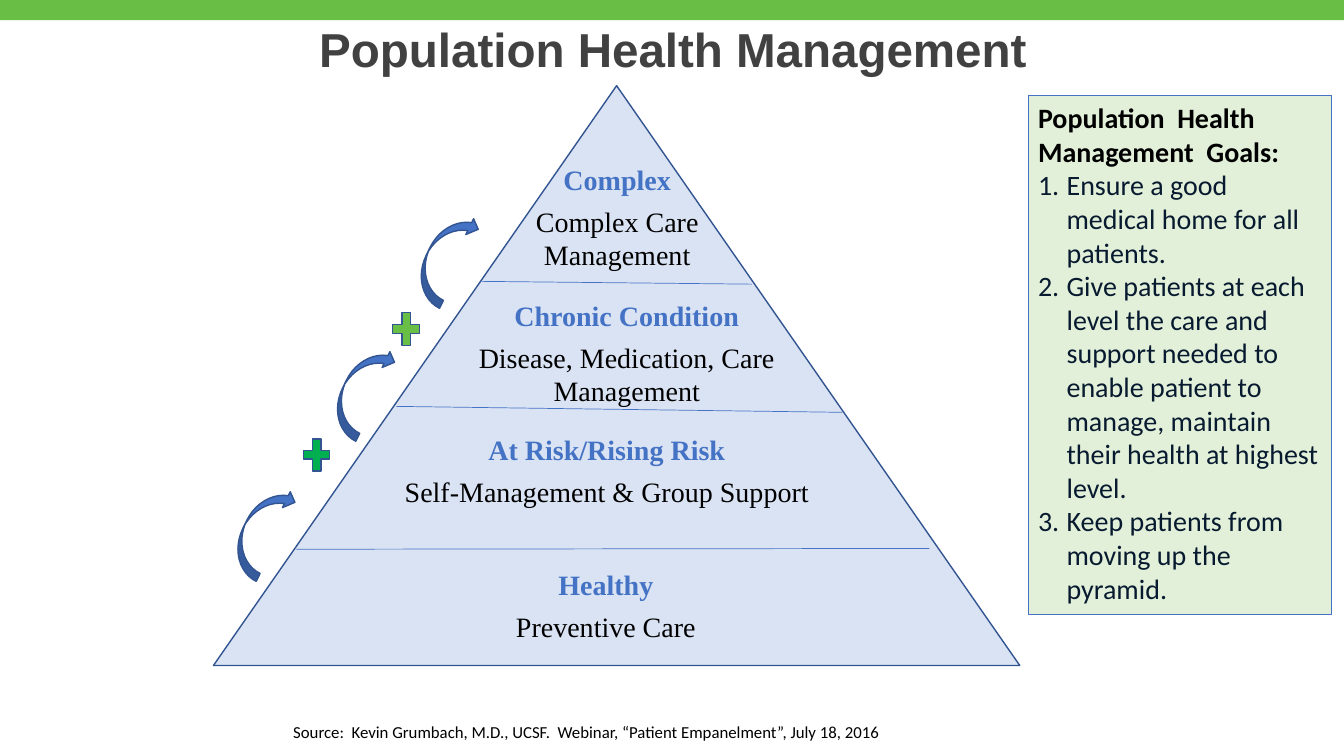
from pptx import Presentation
from pptx.dml.color import RGBColor
from pptx.enum.shapes import MSO_CONNECTOR, MSO_SHAPE
from pptx.enum.text import MSO_ANCHOR, PP_ALIGN
from pptx.oxml.ns import qn
from pptx.util import Cm, Pt
from lxml.etree import SubElement

# Content: places are left, top, width, height in cm
COLORS = {
    "bar": "69BE46", "title": "414141", "pale": "DAE3F3", "edge": "325491",
    "blue": "4472C4", "mint": "E2F0D9", "navy": "081A2F", "black": "000000",
    "green": "00B050",
}
TITLE = "Population Health Management"
LEVELS = [
    ("Complex", "Complex Care Management", (11.58, 3.96, 7.95, 3.02)),
    ("Chronic Condition", "Disease, Medication, Care Management", (10.92, 7.39, 9.75, 3.02)),
    ("At Risk/Rising Risk", "Self-Management & Group Support", (9.91, 10.77, 10.77, 3.02)),
    ("Healthy", "Preventive Care", (11.46, 14.17, 7.62, 2.18)),
]
RULES = [
    (12.14, 7.09, 18.95, 7.16),
    (9.98, 10.24, 21.23, 10.39),
    (7.47, 13.84, 23.42, 13.82),
]
ARROWS = [(6.15, 12.14), (8.66, 8.61), (10.77, 5.26)]
PLUSES = [((7.54, 10.92, 0.89, 1.09), "green"), ((9.78, 7.72, 0.91, 1.14), "bar")]
HEAD = "Population  Health Management  Goals:"
GOALS = [
    "Ensure a good medical home for all patients.",
    "Give patients at each level the care and support needed to enable patient to "
    "manage, maintain their health at highest level.",
    "Keep patients from moving up the pyramid.",
]
SOURCE = "Source:  Kevin Grumbach, M.D., UCSF.  Webinar, “Patient Empanelment”, July 18, 2016"

deck = Presentation()
deck.slide_width, deck.slide_height = Cm(33.87), Cm(19.05)
slide = deck.slides.add_slide(deck.slide_layouts[6])


def paint(color):
    return RGBColor.from_string(COLORS[color])


def draw(kind, place, fill, edge=None, width=1):
    shape = slide.shapes.add_shape(kind, *map(Cm, place))
    shape.shadow.inherit = False
    shape.fill.solid()
    shape.fill.fore_color.rgb = paint(fill)
    if edge:
        shape.line.color.rgb = paint(edge)
        shape.line.width = Pt(width)
    else:
        shape.line.fill.background()
    return shape


def frame(place, wrap=True):
    text = slide.shapes.add_textbox(*map(Cm, place)).text_frame
    text.word_wrap = wrap
    return text


def write(box, text, size=20, font="Calibri", color="black", bold=False,
          align=PP_ALIGN.LEFT, after=0, lead=None, count=False):
    para = box.paragraphs[0]
    if para.runs:
        para = box.add_paragraph()
    para.alignment = align
    para.space_after = Pt(after)
    if lead:
        para.line_spacing = lead
    if count:
        props = para._p.get_or_add_pPr()
        props.set("marL", str(Cm(0.72)))
        props.set("indent", str(-Cm(0.72)))
        SubElement(props, qn("a:buFont"), typeface="+mj-lt")
        SubElement(props, qn("a:buAutoNum"), type="arabicPeriod")
    run = para.add_run()
    run.text = text
    run.font.size, run.font.name, run.font.bold = Pt(size), font, bold
    run.font.color.rgb = paint(color)


# Top bar and title
draw(MSO_SHAPE.RECTANGLE, (0, 0, 33.87, 0.51), "bar")
box = frame((2.97, 0.64, 27.99, 1.37))
box.vertical_anchor = MSO_ANCHOR.MIDDLE
write(box, TITLE, size=34, font="Arial", color="title", bold=True,
      align=PP_ALIGN.CENTER, lead=0.9)

# Pyramid with its levels
draw(MSO_SHAPE.ISOSCELES_TRIANGLE, (5.38, 2.16, 20.32, 14.61), "pale", "edge")
for name, care, place in LEVELS:
    box = frame(place)
    look = dict(font="Times New Roman", align=PP_ALIGN.CENTER)
    write(box, name, color="blue", bold=True, after=6, **look)
    write(box, care, **look)
for ends in RULES:
    rule = slide.shapes.add_connector(MSO_CONNECTOR.STRAIGHT, *map(Cm, ends))
    rule.line.color.rgb = paint("blue")
    rule.line.width = Pt(0.5)
    SubElement(rule._element.spPr, qn("a:effectLst"))

# Goals panel
panel = draw(MSO_SHAPE.RECTANGLE, (25.91, 2.41, 7.65, 13.08), "mint", "blue", 0.75)
box = panel.text_frame
box.word_wrap = True
box.vertical_anchor = MSO_ANCHOR.TOP
write(box, HEAD, bold=True)
for goal in GOALS:
    write(box, goal, color="navy", count=True)

# Source line
write(frame((7.14, 18.06, 15.44, 0.76), wrap=False), SOURCE, size=12)

# Arrows and plus signs up the left side
for left, top in ARROWS:
    arrow = draw(MSO_SHAPE.CURVED_RIGHT_ARROW, (left, top, 0.89, 2.44), "blue", "edge")
    arrow.rotation = 26.1
    arrow._element.spPr.find(qn("a:xfrm")).set("flipV", "1")
for place, color in PLUSES:
    draw(MSO_SHAPE.MATH_PLUS, place, color, "edge")

deck.save("out.pptx")
